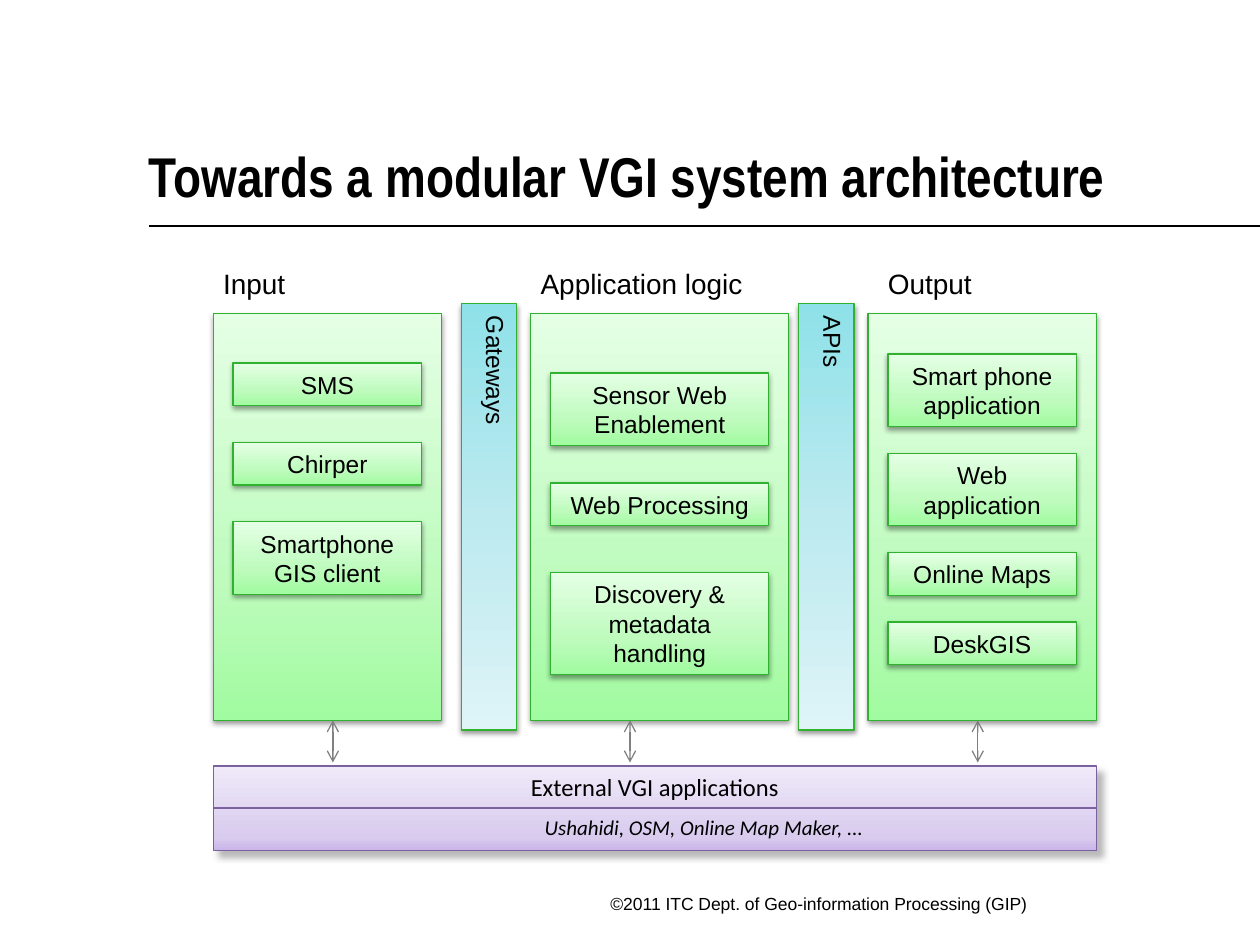
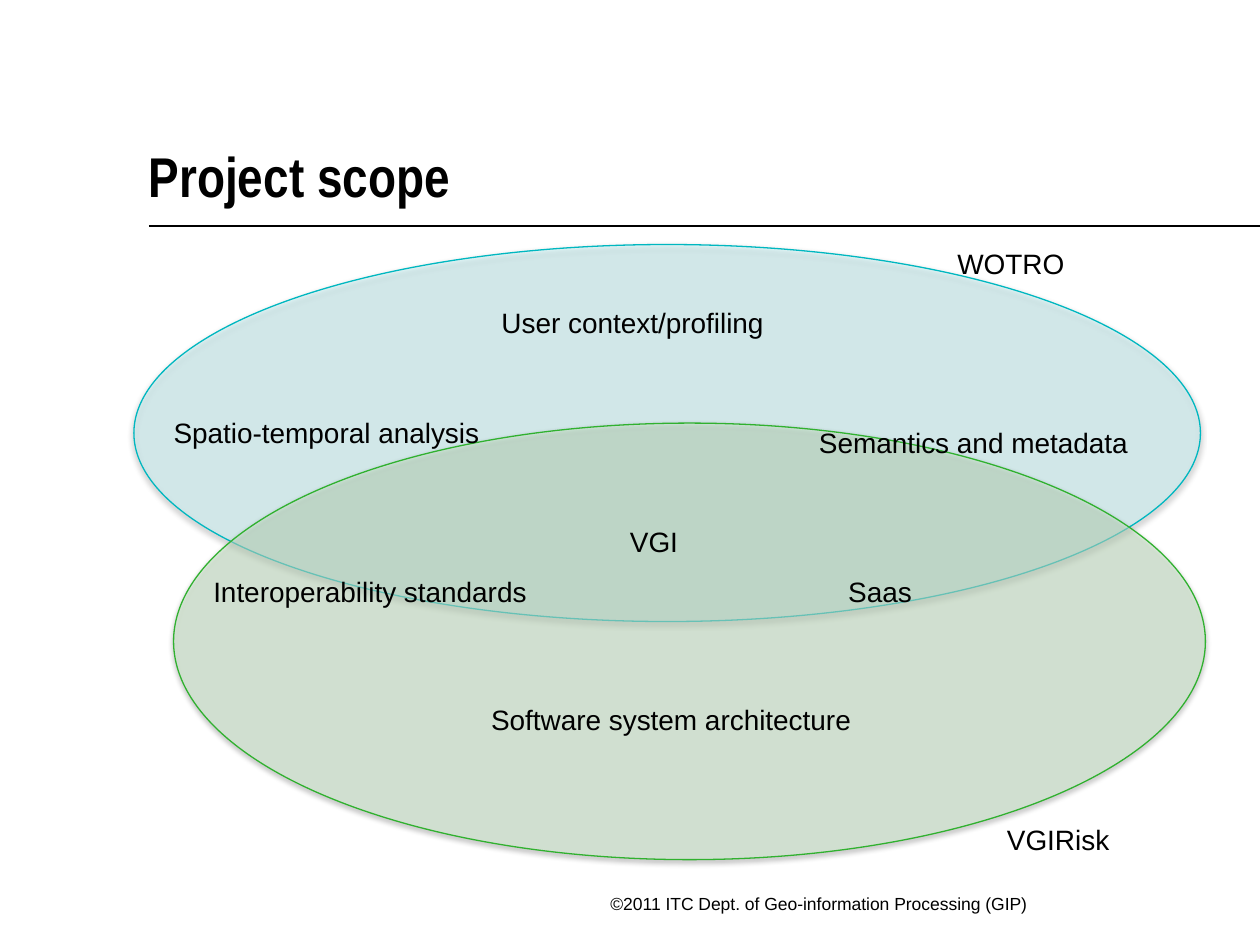
"""Build two slides on a modular VGI system and its project scope."""
import lxml.etree
import pptx
import pptx.dml.color
import pptx.enum.shapes
import pptx.enum.text
import pptx.oxml.ns
import pptx.util

Cm = pptx.util.Cm
Pt = pptx.util.Pt
qn = pptx.oxml.ns.qn
Kind = pptx.enum.shapes.MSO_SHAPE
Align = pptx.enum.text.PP_ALIGN
Anchor = pptx.enum.text.MSO_ANCHOR

HUES = {
    "ink": "000000", "gray": "808080", "green": "30B12F",
    "teal": "00B7C0", "plum": "7D60A0", "aqua": "C1FCFF", "mint": "D4F2D3",
}
FADES = {
    "green": (90, {0: "A1FBA0", 35: "BEFBBD", 100: "E5FFE5"}),
    "cyan": (270, {0: "8FE1E9", 50: "BCEAEF", 100: "DEF4F7"}),
    "plum": (90, {0: "C9B5E8", 15: "D8CBEE", 100: "F0EAF9"}),
}
SHADES = {
    "soft": ("ink", 38, 3.1, 1.6, 90),
    "deep": ("gray", 55, 4, 5, 45),
}
TIGHT = {"margin_left": 0, "margin_right": Cm(0.25)}
FORMS = {
    "title": {
        "frame": {**TIGHT, "margin_bottom": 0, "vertical_anchor": Anchor.BOTTOM},
        "para": {"alignment": Align.LEFT},
        "font": {"name": "Arial Narrow", "size": Pt(32), "bold": True},
    },
    "foot": {
        "frame": {},
        "para": {"alignment": Align.RIGHT, "line_spacing": Pt(15)},
        "font": {"name": "Arial", "size": Pt(10)},
    },
    "label": {
        "frame": TIGHT,
        "para": {"alignment": Align.LEFT, "line_spacing": 0.9},
        "font": {"name": "Arial", "size": Pt(16)},
    },
    "box": {
        "frame": {"vertical_anchor": Anchor.MIDDLE},
        "para": {"alignment": Align.CENTER},
        "font": {"name": "Arial", "size": Pt(14)},
    },
    "bar": {
        "frame": {"vertical_anchor": Anchor.TOP},
        "para": {"alignment": Align.LEFT},
        "font": {"name": "Arial", "size": Pt(14)},
    },
    "band": {
        "frame": {"vertical_anchor": Anchor.TOP},
        "para": {"alignment": Align.CENTER},
        "font": {"name": "Calibri", "size": Pt(14)},
    },
    "names": {
        "frame": {},
        "para": {"alignment": Align.CENTER},
        "font": {"name": "Calibri", "size": Pt(12), "italic": True},
    },
}
FOOT = "©2011 ITC Dept. of Geo-information Processing (GIP)"

PANELS = [
    (4.3, 4.6, 7.32, [0.74, 0.74],
     [("SMS", 1), ("Chirper", 1), ("Smartphone GIS client", 2)]),
    (10.7, 5.2, 7.52, [0.76, 0.94],
     [("Sensor Web Enablement", 2), ("Web Processing", 1),
      ("Discovery & metadata handling", 3)]),
    (17.5, 4.6, 7.14, [0.54, 0.54, 0.54],
     [("Smart phone application", 2), ("Web application", 2),
      ("Online Maps", 1), ("DeskGIS", 1)]),
]
HEADS = [("Input", 4.5, 2), ("Application logic", 10.9, 4.4), ("Output", 17.9, 2)]
BARS = [("Gateways", 9.3), ("APIs", 16.1)]
ARROWS = [6.71, 12.7, 19.71]
TOPICS = [
    ("User context/profiling", 10.11, 6.12, 6.8),
    ("Semantics and metadata", 16.51, 8.53, 6.8),
    ("Software system architecture", 9.9, 14.12, 8.8),
    ("Saas", 17.1, 11.53, 2.8),
    ("Interoperability standards", 4.3, 11.53, 8.8),
    ("Spatio-temporal analysis", 3.5, 8.33, 8.8),
    ("VGIRisk", 20.3, 16.54, 3),
    ("WOTRO", 19.3, 4.93, 3),
    ("VGI", 12.7, 10.52, 2.8),
]


def assign(target, values):
    for key, value in values.items():
        setattr(target, key, value)


def color(hue):
    return pptx.dml.color.RGBColor.from_string(HUES[hue])


def node(home, tag, **values):
    return lxml.etree.SubElement(
        home, qn("a:" + tag), {key: str(value) for key, value in values.items()})


class Deck:
    def __init__(self):
        self.show = pptx.Presentation()
        assign(self.show, {"slide_width": Cm(25.4), "slide_height": Cm(19.05)})
        self.slide = None

    def page(self, title):
        self.slide = self.show.slides.add_slide(self.show.slide_layouts[6])
        self.line(3, 4.55, 25.4, 4.55, "ink", 1)
        self.text(title, 3, 1.02, 21.7, 3.18, "title")
        self.text(FOOT, 10.1, 17.78, 10.85, 1.32, "foot")

    def label(self, shape, words, form):
        frame = shape.text_frame
        frame.word_wrap = True
        para = frame.paragraphs[0]
        para.text = words
        style = FORMS[form]
        assign(frame, style["frame"])
        assign(para, style["para"])
        assign(para.font, style["font"])
        para.font.color.rgb = color("ink")

    def text(self, words, left, top, width, height, form):
        box = self.slide.shapes.add_textbox(Cm(left), Cm(top), Cm(width), Cm(height))
        self.label(box, words, form)

    def shape(self, kind, left, top, width, height, edge, shade="soft"):
        form = self.slide.shapes.add_shape(
            kind, Cm(left), Cm(top), Cm(width), Cm(height))
        form.line.color.rgb = color(edge)
        form.line.width = Pt(0.75)
        form.shadow.inherit = False
        hue, alpha, blur, gap, turn = SHADES[shade]
        glow = node(form.element.spPr.find(qn("a:effectLst")), "outerShdw",
                    blurRad=int(Pt(blur)), dist=int(Pt(gap)),
                    dir=turn * 60000, rotWithShape=0)
        node(node(glow, "srgbClr", val=HUES[hue]), "alpha", val=alpha * 1000)
        return form

    def rect(self, left, top, width, height, fade, edge="green", shade="soft"):
        form = self.shape(Kind.RECTANGLE, left, top, width, height, edge, shade)
        angle, stops = FADES[fade]
        form.fill.gradient()
        form.fill.gradient_angle = angle
        ramp = form.element.spPr.find(qn("a:gradFill")).find(qn("a:gsLst"))
        for stop in list(ramp):
            ramp.remove(stop)
        for place, tint in stops.items():
            node(node(ramp, "gs", pos=place * 1000), "srgbClr", val=tint)
        return form

    def oval(self, left, top, width, height, hue, alpha, edge):
        form = self.shape(Kind.OVAL, left, top, width, height, edge)
        form.fill.solid()
        form.fill.fore_color.rgb = color(hue)
        tint = form.element.spPr.find(qn("a:solidFill"))[0]
        node(tint, "alpha", val=alpha * 1000)

    def bar(self, words, left):
        form = self.rect(left, 6.12, 1.12, 8.6, "cyan")
        self.label(form, words, "bar")
        form.element.txBody.find(qn("a:bodyPr")).set("vert", "eaVert")

    def line(self, left, top, right, low, hue, width=0.75, heads=()):
        link = self.slide.shapes.add_connector(
            pptx.enum.shapes.MSO_CONNECTOR.STRAIGHT,
            Cm(left), Cm(top), Cm(right), Cm(low))
        link.line.color.rgb = color(hue)
        link.line.width = Pt(width)
        props = link.element.spPr
        for head in heads:
            node(props.find(qn("a:ln")), head, type="arrow")
        node(props, "effectLst")
        return link

    def panel(self, left, width, top, gaps, items):
        self.rect(left, 6.32, width, 8.2, "green")
        for (words, rows), gap in zip(items, gaps + [0]):
            height = 0.86 + 0.6 * (rows - 1)
            box = self.rect(left + 0.4, top, width - 0.8, height, "green")
            self.label(box, words, "box")
            top += height + gap


def main():
    deck = Deck()
    deck.page("Towards a modular VGI system architecture")
    for panel in PANELS:
        deck.panel(*panel)
    for words, left, width in HEADS:
        deck.text(words, left, 5.33, width, 1, "label")
    for words, left in BARS:
        deck.bar(words, left)
    band = deck.rect(4.3, 15.44, 17.8, 1.7, "plum", "plum", "deep")
    deck.label(band, "External VGI applications", "band")
    split = deck.line(4.3, 16.29, 22.1, 16.29, "plum")
    split.begin_connect(band, 1)
    split.end_connect(band, 3)
    deck.text("Ushahidi, OSM, Online Map Maker, ...", 9.42, 16.3, 9.55, 0.77, "names")
    for left in ARROWS:
        deck.line(left, 15.37, left, 14.52, "gray", heads=("headEnd", "tailEnd"))

    deck.page("Project scope")
    deck.oval(2.7, 4.93, 21.5, 7.6, "aqua", 37, "teal")
    deck.oval(3.5, 8.53, 20.8, 8.8, "mint", 49, "green")
    for words, left, top, width in TOPICS:
        deck.text(words, left, top, width, 1, "label")
    deck.show.save("out.pptx")


if __name__ == "__main__":
    main()
